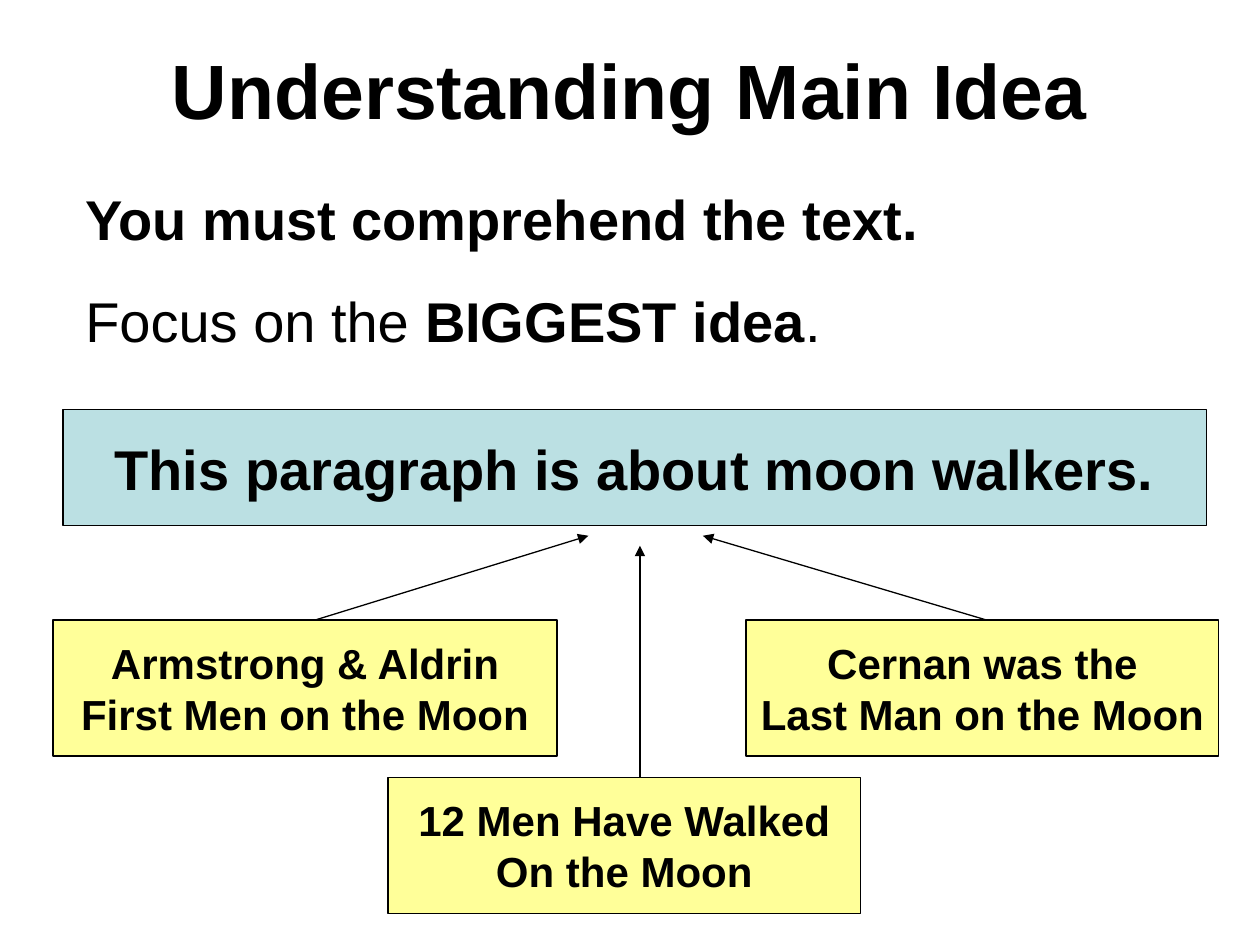
from lxml.etree import SubElement
from pptx import Presentation
from pptx.dml.color import RGBColor
from pptx.enum.shapes import MSO_CONNECTOR, MSO_SHAPE
from pptx.enum.text import MSO_ANCHOR, PP_ALIGN
from pptx.oxml.ns import qn
from pptx.util import Cm, Pt

BLACK = "000000"
DETAIL_YELLOW = "FFFF99"
IDEA_BLUE = "BBE0E3"
DETAIL_TOP = 12.5
LOWER_DETAIL_TOP = 15.67
DETAIL_HEIGHT = 2.74


def color(code):
    return RGBColor.from_string(code)


def write(frame, text, size, bold=True, align=PP_ALIGN.CENTER,
          anchor=MSO_ANCHOR.MIDDLE, wrap=True, gaps=()):
    frame.word_wrap = wrap
    frame.vertical_anchor = anchor
    for index, line in enumerate(text.split("\n")):
        paragraph = frame.paragraphs[0] if index == 0 else frame.add_paragraph()
        paragraph.alignment = align
        paragraph.space_before = Pt(gaps[index] if gaps else 0)
        for position, part in enumerate(line.split("*")):
            if part:
                run = paragraph.add_run()
                run.text = part
                run.font.name = "Arial"
                run.font.size = Pt(size)
                run.font.bold = bold or position % 2 == 1
                run.font.color.rgb = color(BLACK)


def add_title(slide, text):
    title = slide.shapes.title
    title.left, title.top, title.width, title.height = Cm(1.27), Cm(0.2), Cm(22.86), Cm(3.18)
    write(title.text_frame, text, 44)


def add_advice(slide, text):
    advice = slide.shapes.add_textbox(Cm(1.47), Cm(3.6), Cm(22.86), Cm(4.01))
    write(advice.text_frame, text, 32, bold=False, align=PP_ALIGN.LEFT,
          anchor=MSO_ANCHOR.TOP, gaps=(6.4, 19.8))


def add_box(slide, text, left, top, width, height, fill, size):
    box = slide.shapes.add_shape(MSO_SHAPE.RECTANGLE, Cm(left), Cm(top), Cm(width), Cm(height))
    box.shadow.inherit = False
    box.fill.solid()
    box.fill.fore_color.rgb = color(fill)
    box.line.color.rgb = color(BLACK)
    box.line.width = Pt(0.75)
    write(box.text_frame, text, size, wrap=False)


def add_arrow(slide, start, end):
    arrow = slide.shapes.add_connector(MSO_CONNECTOR.STRAIGHT, *map(Cm, start + end))
    arrow.line.color.rgb = color(BLACK)
    arrow.line.width = Pt(0.75)
    SubElement(arrow.line._get_or_add_ln(), qn("a:tailEnd"), type="triangle")
    SubElement(arrow._element.spPr, qn("a:effectLst"))


def main():
    deck = Presentation()
    deck.slide_width, deck.slide_height = Cm(25.4), Cm(19.05)
    slide = deck.slides.add_slide(deck.slide_layouts[5])

    add_title(slide, "Understanding Main Idea")
    add_advice(slide, "*You must comprehend the text.*\nFocus on the *BIGGEST idea*.")

    details = [
        ("Armstrong & Aldrin\nFirst Men on the Moon", 1.07, DETAIL_TOP, 10.16),
        ("Cernan was the\nLast Man on the Moon", 15.04, DETAIL_TOP, 9.53),
        ("12 Men Have Walked\nOn the Moon", 7.82, LOWER_DETAIL_TOP, 9.53),
    ]
    for text, left, top, width in details:
        add_box(slide, text, left, top, width, DETAIL_HEIGHT, DETAIL_YELLOW, 24)
    add_box(slide, "This paragraph is about moon walkers.",
            1.27, 8.26, 23.06, 2.34, IDEA_BLUE, 32)

    support_arrows = [
        ((6.35, DETAIL_TOP), (11.86, 10.8)),
        ((12.9, LOWER_DETAIL_TOP), (12.9, 11)),
        ((19.89, DETAIL_TOP), (14.17, 10.8)),
    ]
    for start, end in support_arrows:
        add_arrow(slide, start, end)

    deck.save("out.pptx")


if __name__ == "__main__":
    main()
